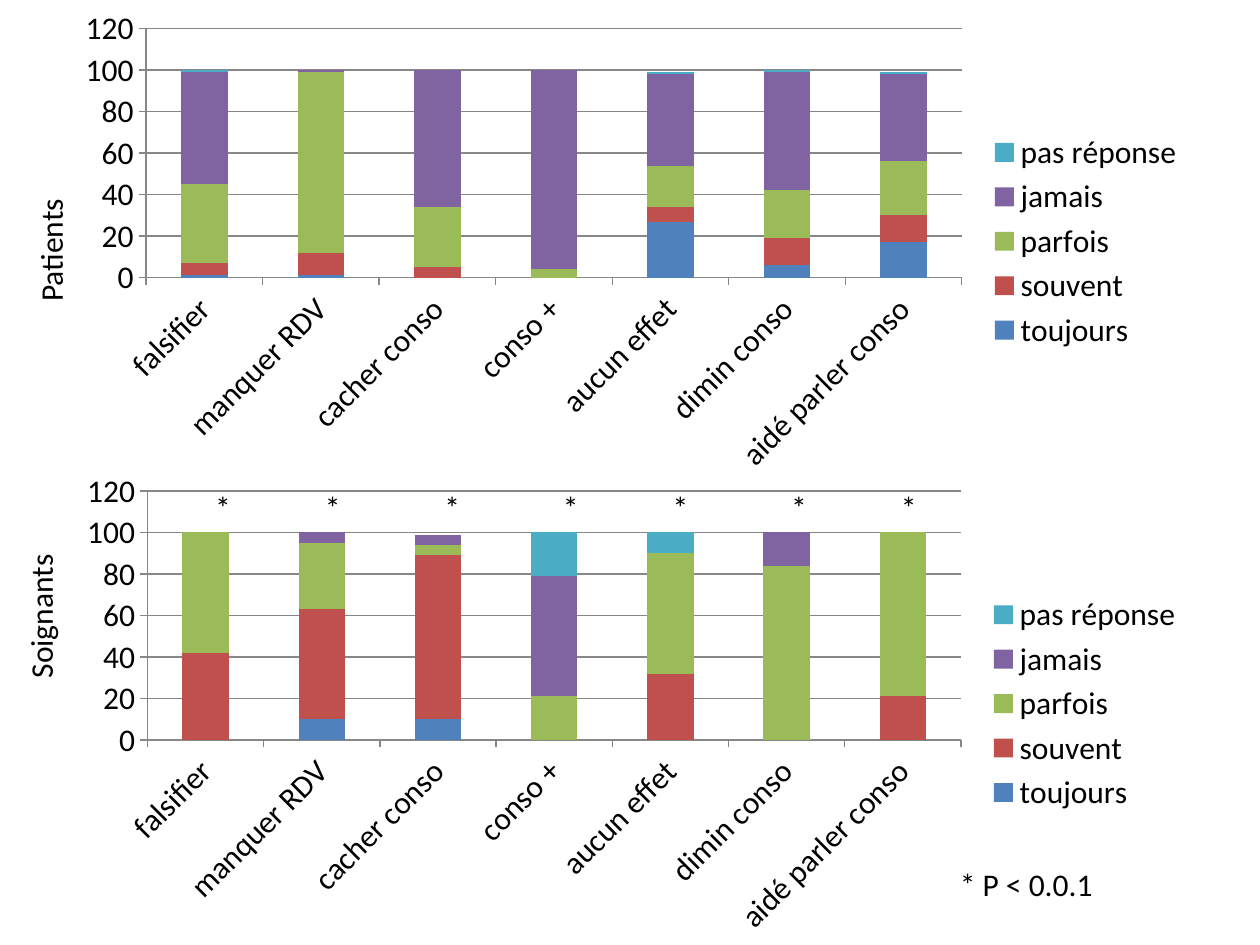
from dataclasses import dataclass

from pptx import Presentation
from pptx import util as u
from pptx.chart.data import CategoryChartData
from pptx.dml.color import RGBColor
from pptx.enum import chart as ch

Cm = u.Cm


@dataclass(frozen=True)
class Theme:
    """Colours and type of the slide."""
    font: str = "Calibri"
    size: int = 18
    ink: str = "000000"
    line: str = "878787"
    series: tuple = ("4F81BD", "C0504D", "9BBB59", "8064A2", "4BACC6")


@dataclass(frozen=True)
class Box:
    """A rectangle in centimetres."""
    x: float
    y: float
    w: float
    h: float

    def inner(self, dx, dy, w, h):
        """Return a box placed relative to this one."""
        return Box(self.x + dx, self.y + dy, w, h)

    def emu(self):
        """Return left, top, width and height as lengths."""
        return Cm(self.x), Cm(self.y), Cm(self.w), Cm(self.h)


THEME = Theme()
LINE_H = 1.02
BEHAVIOURS = ("falsifier", "manquer RDV", "cacher conso", "conso +",
              "aucun effet", "dimin conso", "aidé parler conso")
ANSWERS = ("toujours", "souvent", "parfois", "jamais", "pas réponse")
PATIENTS = ((1, 1, 0, 0, 27, 6, 17),
            (6, 11, 5, 0, 7, 13, 13),
            (38, 87, 29, 4, 20, 23, 26),
            (54, 1, 66, 96, 44, 57, 42),
            (1, 0, 0, 0, 1, 1, 1))
CAREGIVERS = ((0, 10, 10, 0, 0, 0, 0),
              (42, 53, 79, 0, 32, 0, 21),
              (58, 32, 5, 21, 58, 84, 79),
              (0, 5, 5, 58, 0, 16, 0),
              (0, 0, 0, 21, 10, 0, 0))
STAR_OFFSETS = (2.79, 5.0, 7.41, 9.8, 12.01, 14.4, 16.61)


def style_font(font):
    """Apply the theme's type to a font."""
    font.name = THEME.font
    font.size = u.Pt(THEME.size)
    font.color.rgb = RGBColor.from_string(THEME.ink)


def add_label(s, box, text, rotation=0):
    """Place one line of text in the box."""
    sp = s.shapes.add_textbox(*box.emu())
    sp.rotation = rotation
    tf = sp.text_frame
    tf.word_wrap = True
    tf.margin_right = 0
    tf.text = text
    style_font(tf.paragraphs[0].runs[0].font)


def style_line(line):
    """Give an axis or grid line the theme's thin grey."""
    line.color.rgb = RGBColor.from_string(THEME.line)
    line.width = u.Pt(0.75)


def add_answers_chart(s, box, answers):
    """Draw the stacked answers for every behaviour."""
    data = CategoryChartData()
    data.categories = BEHAVIOURS
    for name, values in zip(ANSWERS, answers):
        data.add_series(name, values)
    chart = s.shapes.add_chart(
        ch.XL_CHART_TYPE.COLUMN_STACKED, *box.emu(), data).chart
    style_font(chart.font)
    chart.has_title = False
    chart.has_legend = True
    chart.legend.position = ch.XL_LEGEND_POSITION.RIGHT
    chart.legend.include_in_layout = False

    plot = chart.plots[0]
    plot.gap_width = 150
    plot.overlap = 100
    plot.vary_by_categories = False
    for series, color in zip(plot.series, THEME.series):
        series.format.fill.solid()
        series.format.fill.fore_color.rgb = RGBColor.from_string(color)

    cat, val = chart.category_axis, chart.value_axis
    for axis in (cat, val):
        axis.major_tick_mark = ch.XL_TICK_MARK.OUTSIDE
        style_line(axis.format.line)
    cat._element.get_or_add_txPr().bodyPr.set("rot", "-2700000")
    val.minimum_scale, val.maximum_scale, val.major_unit = 0, 120, 20
    val.has_major_gridlines = True
    style_line(val.major_gridlines.format.line)


def add_patients(s, box):
    """Place the patients' chart and its side title."""
    add_answers_chart(s, box, PATIENTS)
    add_label(s, box.inner(-1.75, 4.32, 3.0, LINE_H), "Patients", 270)


def add_caregivers(s, box):
    """Place the caregivers' chart, side title, stars and key."""
    add_answers_chart(s, box, CAREGIVERS)
    add_label(s, box.inner(-2.39, 2.19, 3.81, LINE_H), "Soignants", 270)
    for dx in STAR_OFFSETS:
        add_label(s, box.inner(dx, 0.4, 0.41, LINE_H), "*")
    add_label(s, box.inner(17.8, 8.0, 3.81, LINE_H), "* P < 0.0.1")


def main():
    """Build the slide and save it."""
    prs = Presentation()
    prs.slide_width, prs.slide_height = Cm(25.4), Cm(19.05)
    s = prs.slides.add_slide(prs.slide_layouts[6])
    add_patients(s, Box(1.27, 0, 22.86, 9.73))
    add_caregivers(s, Box(1.3, 9.32, 22.81, 9.73))
    prs.save("out.pptx")


if __name__ == "__main__":
    main()
